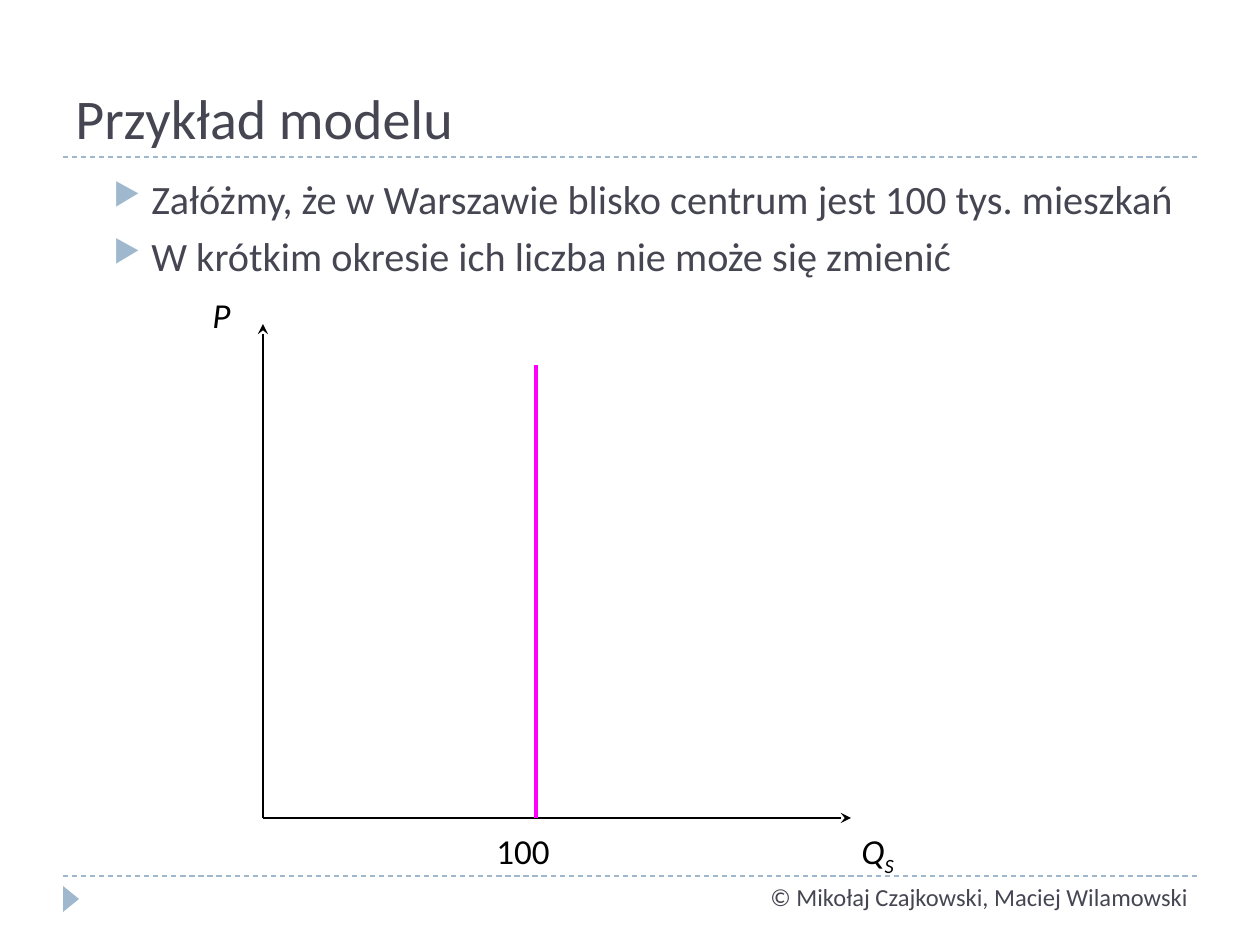
import pptx
import pptx.dml.color
import pptx.enum.dml
import pptx.enum.shapes
import pptx.enum.text
import pptx.oxml.ns
import pptx.util
import lxml.etree

EMU_PER_PX = 914400 / 126
SLATE = pptx.dml.color.RGBColor(0x46, 0x46, 0x53)
PALE_BLUE = pptx.dml.color.RGBColor(0x9F, 0xB8, 0xCD)
BLACK = pptx.dml.color.RGBColor(0, 0, 0)
MAGENTA = pptx.dml.color.RGBColor(0xFF, 0, 0xFF)


def px(length):
    return pptx.util.Emu(round(length * EMU_PER_PX))


def add_element(parent, tag, **attributes):
    return lxml.etree.SubElement(parent, pptx.oxml.ns.qn(tag), attributes)


def write_text(paragraph, text, font="Calibri", size=20, color=BLACK, italic=False, baseline=0):
    run = paragraph.add_run()
    run.text = text
    run.font.name = font
    run.font.size = pptx.util.Pt(size)
    run.font.color.rgb = color
    run.font.italic = italic
    if baseline:
        run.font._element.set("baseline", str(baseline * 1000))


class SlideBuilder:
    def __init__(self, presentation):
        self.slide = presentation.slides.add_slide(presentation.slide_layouts[6])

    def line(self, start, end, color=BLACK, width=1, dashed=False, arrow=False):
        connector = self.slide.shapes.add_connector(
            pptx.enum.shapes.MSO_CONNECTOR.STRAIGHT, *map(px, start + end))
        connector.line.color.rgb = color
        connector.line.width = pptx.util.Pt(width)
        if dashed:
            connector.line.dash_style = pptx.enum.dml.MSO_LINE.DASH
        if arrow:
            add_element(connector.line._get_or_add_ln(), "a:tailEnd", type="stealth")
        add_element(connector._element.spPr, "a:effectLst")

    def triangle(self, left, top, width, height, color):
        shape = self.slide.shapes.add_shape(
            pptx.enum.shapes.MSO_SHAPE.ISOSCELES_TRIANGLE, *map(px, (left, top, width, height)))
        shape.rotation = 90
        shape.shadow.inherit = False
        shape.fill.solid()
        shape.fill.fore_color.rgb = color
        shape.line.fill.background()

    def text_frame(self, left, top, width, height, wrap=True):
        frame = self.slide.shapes.add_textbox(*map(px, (left, top, width, height))).text_frame
        frame.word_wrap = wrap
        if not wrap:
            frame.auto_size = pptx.enum.text.MSO_AUTO_SIZE.SHAPE_TO_FIT_TEXT
        return frame

    def label(self, left, top, width, height, text, subscript="", **style):
        paragraph = self.text_frame(left, top, width, height, wrap=False).paragraphs[0]
        write_text(paragraph, text, **style)
        if subscript:
            write_text(paragraph, subscript, baseline=-25, **style)

    def title(self, left, top, width, height, text):
        frame = self.text_frame(left, top, width, height)
        frame.vertical_anchor = pptx.enum.text.MSO_ANCHOR.BOTTOM
        write_text(frame.paragraphs[0], text, size=32, color=SLATE)

    def bullets(self, left, top, width, height, items):
        frame = self.text_frame(left, top, width, height)
        for index, item in enumerate(items):
            paragraph = frame.add_paragraph() if index else frame.paragraphs[0]
            paragraph.space_before = pptx.util.Pt(5)
            properties = paragraph._p.get_or_add_pPr()
            properties.set("marL", str(px(76)))
            properties.set("indent", str(px(-38)))
            add_element(add_element(properties, "a:buClr"), "a:srgbClr", val=str(PALE_BLUE))
            add_element(properties, "a:buSzPct", val="76000")
            add_element(properties, "a:buChar", char="▶")
            write_text(paragraph, item, size=23, color=SLATE)


def main():
    presentation = pptx.Presentation()
    presentation.slide_width = px(1260)
    presentation.slide_height = px(945)
    builder = SlideBuilder(presentation)

    for rule_y in (876, 157):
        builder.line((63, rule_y), (1197, rule_y), PALE_BLUE, 0.75, dashed=True)
    builder.triangle(58, 891, 26, 16, PALE_BLUE)
    builder.label(758, 876, 446, 43, "© Mikołaj Czajkowski, Maciej Wilamowski",
                  size=14, color=SLATE)

    builder.title(63, 21, 1134, 136, "Przykład modelu")
    builder.bullets(63, 168, 1134, 680, (
        "Załóżmy, że w Warszawie blisko centrum jest 100 tys. mieszkań",
        "W krótkim okresie ich liczba nie może się zmienić",
    ))

    origin = (263, 818)
    supply_x = 536
    builder.line(origin, (origin[0], 324), arrow=True)
    builder.line(origin, (851, origin[1]), arrow=True)
    builder.label(200, 287, 44, 55, "P", italic=True)
    builder.label(849, 823, 59, 55, "Q", subscript="S", italic=True)
    builder.line((supply_x, origin[1]), (supply_x, 365), MAGENTA, 2.5)
    builder.label(484, 823, 79, 55, "100")

    presentation.save("out.pptx")


if __name__ == "__main__":
    main()
